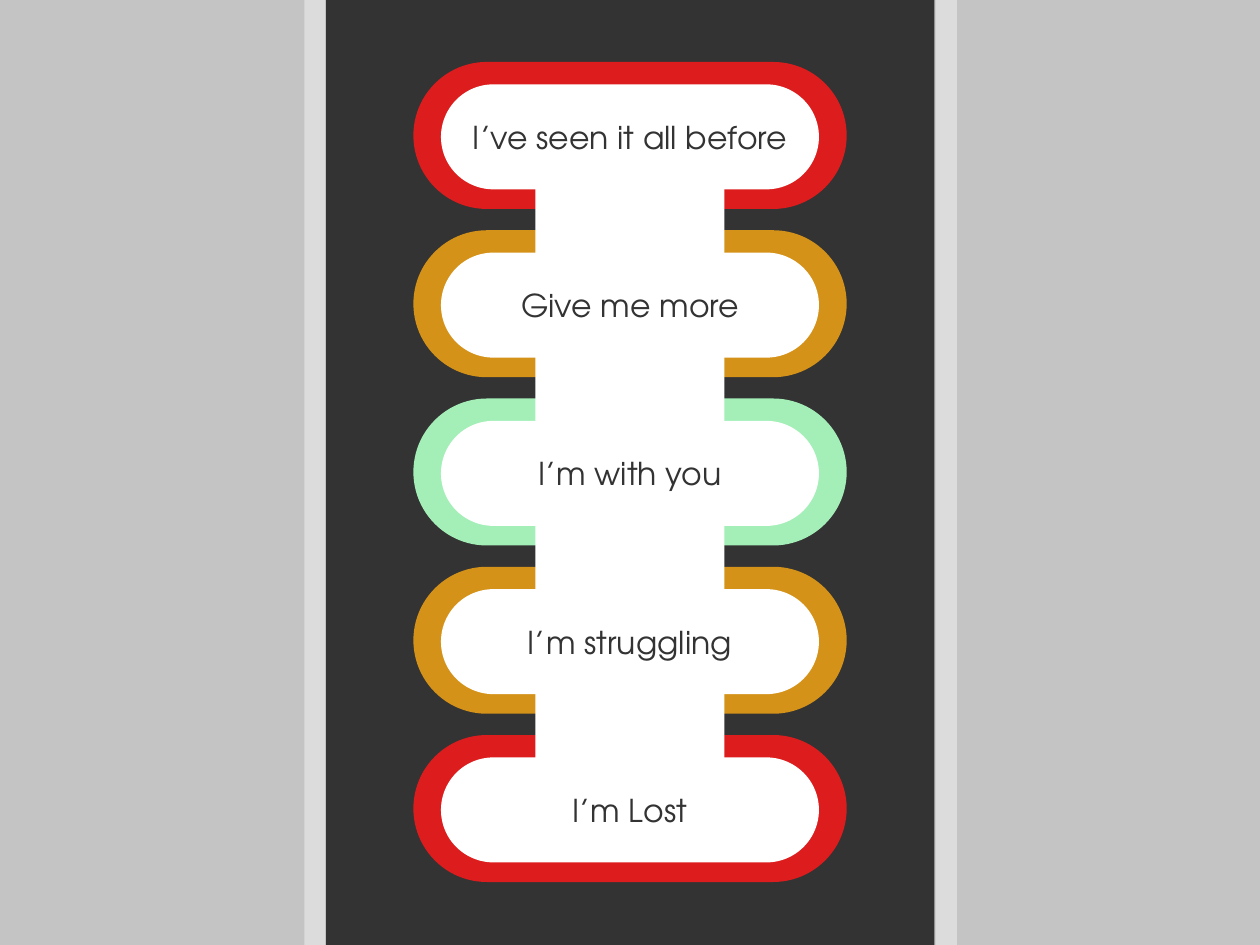
from dataclasses import dataclass

from pptx import Presentation
from pptx.dml.color import RGBColor
from pptx.enum.shapes import MSO_SHAPE
from pptx.enum.text import MSO_ANCHOR, PP_ALIGN
from pptx.util import Pt

RECTANGLE = MSO_SHAPE.RECTANGLE
PILL = MSO_SHAPE.ROUNDED_RECTANGLE
MIDDLE = MSO_ANCHOR.MIDDLE
CENTER = PP_ALIGN.CENTER


@dataclass(frozen=True)
class Theme:
    font: str = "TeX Gyre Adventor"
    label_size: int = 18
    background: str = "C4C4C4"
    dark: str = "333333"
    edge: str = "DCDCDC"
    white: str = "FFFFFF"
    red: str = "DD1D1D"
    amber: str = "D59219"
    green: str = "A3EFB7"


THEME = Theme()
SLIDE_WIDTH, SLIDE_HEIGHT = 720, 540
FIRST_TOP, STEP = 35.4, 96.15
RING_WIDTH, RING_HEIGHT = 247.6, 84
LABEL_WIDTH, LABEL_HEIGHT, LABEL_DROP = 216, 60, 12.8
COLUMN_WIDTH, COLUMN_TOP, COLUMN_HEIGHT = 108, 54, 432
LEVELS = [
    ("I’ve seen it all before", THEME.red),
    ("Give me more", THEME.amber),
    ("I’m with you", THEME.green),
    ("I’m struggling", THEME.amber),
    ("I’m Lost", THEME.red),
]


def add_block(slide, kind, left, top, width, height, color):
    block = slide.shapes.add_shape(kind, Pt(left), Pt(top), Pt(width), Pt(height))
    block.fill.solid()
    block.fill.fore_color.rgb = RGBColor.from_string(color)
    block.line.fill.background()
    block.shadow.inherit = False
    return block


def add_pill(slide, top, width, height, color):
    left = (SLIDE_WIDTH - width) / 2
    pill = add_block(slide, PILL, left, top, width, height, color)
    pill.adjustments[0] = 0.5
    return pill


def add_label(slide, top, text):
    label = add_pill(slide, top, LABEL_WIDTH, LABEL_HEIGHT, THEME.white)
    frame = label.text_frame
    frame.text = text
    frame.word_wrap = True
    frame.vertical_anchor = MIDDLE
    para = frame.paragraphs[0]
    para.alignment = CENTER
    font = para.runs[0].font
    font.name = THEME.font
    font.size = Pt(THEME.label_size)
    font.color.rgb = RGBColor.from_string(THEME.dark)


def main():
    deck = Presentation()
    deck.slide_width, deck.slide_height = Pt(SLIDE_WIDTH), Pt(SLIDE_HEIGHT)
    slide = deck.slides.add_slide(deck.slide_layouts.get_by_name("Blank"))
    slide.background.fill.solid()
    slide.background.fill.fore_color.rgb = RGBColor.from_string(THEME.background)

    add_block(slide, RECTANGLE, 186, 0, 348, SLIDE_HEIGHT, THEME.dark)
    tops = [FIRST_TOP + index * STEP for index in range(len(LEVELS))]
    for top, (text, color) in zip(tops, LEVELS):
        add_pill(slide, top, RING_WIDTH, RING_HEIGHT, color)
    add_pill(slide, COLUMN_TOP, COLUMN_WIDTH, COLUMN_HEIGHT, THEME.white)
    for top, (text, color) in zip(tops, LEVELS):
        add_label(slide, top + LABEL_DROP, text)
    for left in (174, 534.7):
        add_block(slide, RECTANGLE, left, 0, 12.2, SLIDE_HEIGHT, THEME.edge)

    deck.save("out.pptx")


if __name__ == "__main__":
    main()
